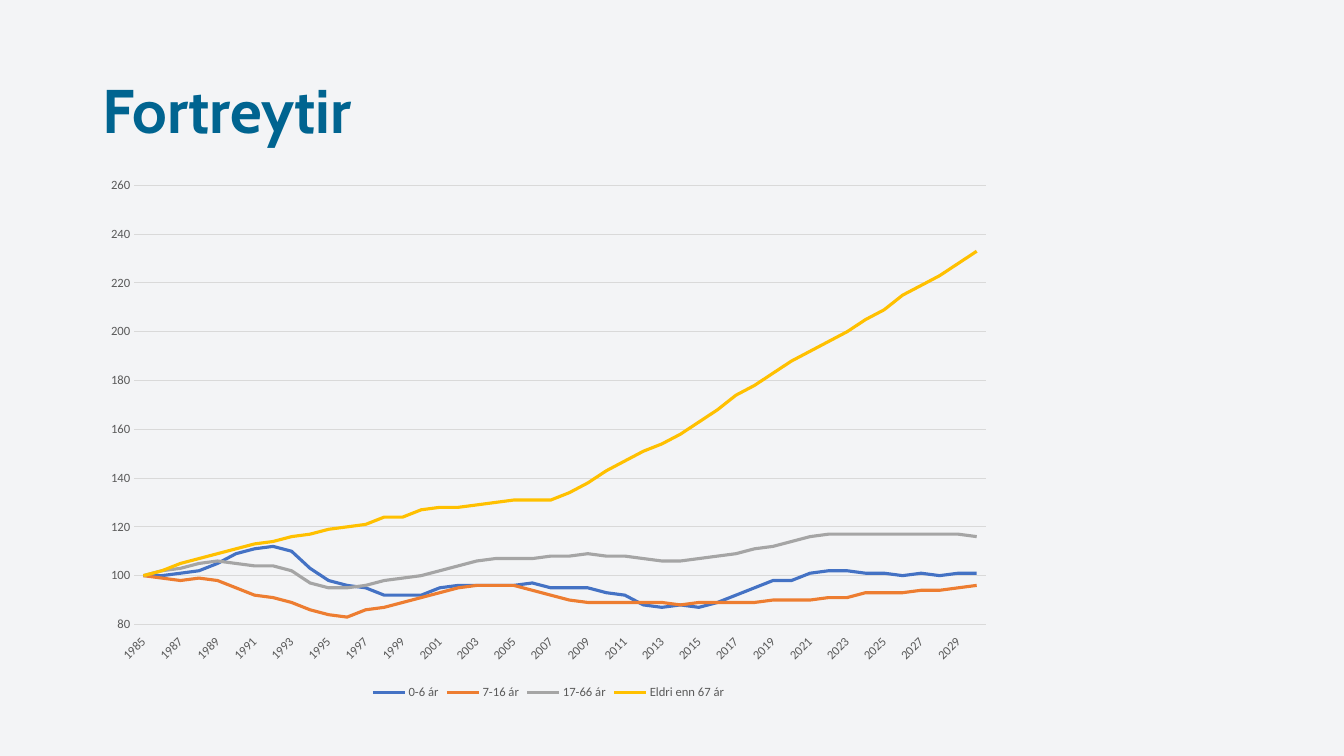
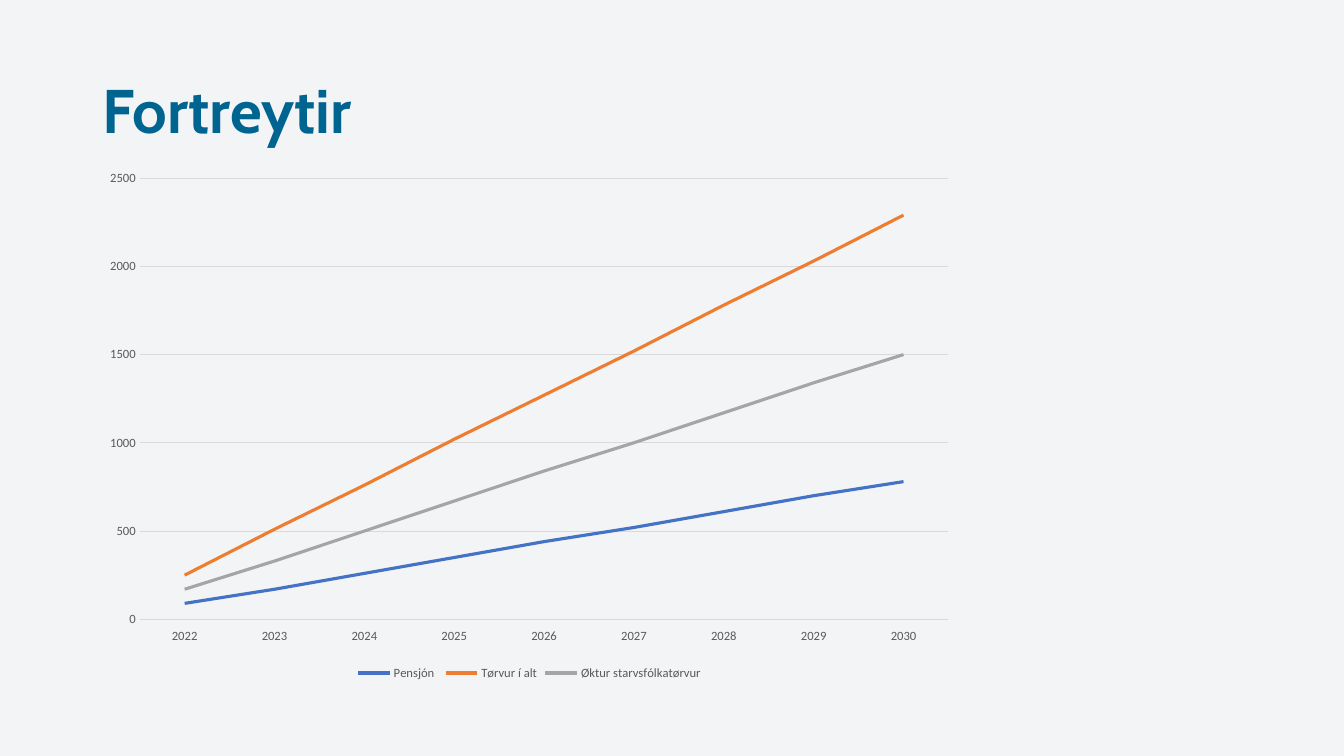
import dataclasses
import pptx
import pptx.chart.data
import pptx.dml.color
import pptx.enum.chart
import pptx.enum.text
import pptx.oxml.ns
import pptx.util

Inches = pptx.util.Inches
Pt = pptx.util.Pt


# Shared colours, fonts and sizes
@dataclasses.dataclass(frozen=True)
class Theme:
    back: str = "F3F4F6"
    head: str = "006490"
    label: str = "595959"
    grid: str = "D9D9D9"
    lines: tuple = ("4472C4", "ED7D31", "A5A5A5", "FFC000")
    head_font: str = "Cabin"
    font: str = "Calibri"
    head_size: int = 44
    size: int = 9
    thin: float = 0.75
    thick: float = 2.25


THEME = Theme()

# Index of each age group, 1985 = 100
AGES = {
    "0-6 ár": (
        100, 100, 101, 102, 105, 109, 111, 112, 110, 103, 98, 96, 95, 92, 92, 92,
        95, 96, 96, 96, 96, 97, 95, 95, 95, 93, 92, 88, 87, 88, 87, 89,
        92, 95, 98, 98, 101, 102, 102, 101, 101, 100, 101, 100, 101, 101),
    "7-16 ár": (
        100, 99, 98, 99, 98, 95, 92, 91, 89, 86, 84, 83, 86, 87, 89, 91,
        93, 95, 96, 96, 96, 94, 92, 90, 89, 89, 89, 89, 89, 88, 89, 89,
        89, 89, 90, 90, 90, 91, 91, 93, 93, 93, 94, 94, 95, 96),
    "17-66 ár": (
        100, 102, 103, 105, 106, 105, 104, 104, 102, 97, 95, 95, 96, 98, 99, 100,
        102, 104, 106, 107, 107, 107, 108, 108, 109, 108, 108, 107, 106, 106, 107, 108,
        109, 111, 112, 114, 116, 117, 117, 117, 117, 117, 117, 117, 117, 116),
    "Eldri enn 67 ár": (
        100, 102, 105, 107, 109, 111, 113, 114, 116, 117, 119, 120, 121, 124, 124, 127,
        128, 128, 129, 130, 131, 131, 131, 134, 138, 143, 147, 151, 154, 158, 163, 168,
        174, 178, 183, 188, 192, 196, 200, 205, 209, 215, 219, 223, 228, 233),
}

# Need for staff
STAFF = {
    "Pensjón ": (90, 170, 260, 350, 440, 520, 610, 700, 780),
    "Tørvur í alt": (250, 510, 760, 1020, 1270, 1520, 1780, 2030, 2290),
    "Øktur starvsfólkatørvur": (170, 330, 500, 670, 840, 1000, 1170, 1340, 1500),
}


def color(code):
    return pptx.dml.color.RGBColor.from_string(code)


def style_font(font, name, size, code, bold=False):
    font.name = name
    font.size = Pt(size)
    font.bold = bold
    font.color.rgb = color(code)


def style_line(line, code, width):
    line.color.rgb = color(code)
    line.width = Pt(width)


def add_slide(deck, title):
    """Add a blank slide with the shared ground and title."""
    slide = deck.slides.add_slide(deck.slide_layouts[6])
    slide.background.fill.solid()
    slide.background.fill.fore_color.rgb = color(THEME.back)

    box = slide.shapes.add_textbox(Inches(0.92), Inches(0.4), Inches(11.5), Inches(1.45))
    frame = box.text_frame
    frame.word_wrap = True
    frame.vertical_anchor = pptx.enum.text.MSO_ANCHOR.MIDDLE
    frame.text = title
    para = frame.paragraphs[0]
    para.line_spacing = 0.9
    style_font(para.runs[0].font, THEME.head_font, THEME.head_size, THEME.head, True)
    return slide


def style_axis(axis):
    axis.major_tick_mark = pptx.enum.chart.XL_TICK_MARK.NONE
    axis.minor_tick_mark = pptx.enum.chart.XL_TICK_MARK.NONE
    style_font(axis.tick_labels.font, THEME.font, THEME.size, THEME.label)


def style_axes(chart, low, high, step, form):
    years = chart.category_axis
    style_axis(years)
    years.tick_label_position = pptx.enum.chart.XL_TICK_LABEL_POSITION.LOW
    style_line(years.format.line, THEME.grid, THEME.thin)
    # Let the year labels turn when they are crowded
    body = years._element.find(".//" + pptx.oxml.ns.qn("a:bodyPr"))
    body.set("rot", "-60000000")

    scale = chart.value_axis
    style_axis(scale)
    scale.format.line.fill.background()
    scale.minimum_scale = low
    scale.maximum_scale = high
    scale.major_unit = step
    scale.has_major_gridlines = True
    style_line(scale.major_gridlines.format.line, THEME.grid, THEME.thin)
    scale.tick_labels.number_format = form
    scale.tick_labels.number_format_is_linked = False


def add_lines(slide, place, start, groups, low, high, step, form="General"):
    """Add a line chart with one point a year from the start year."""
    data = pptx.chart.data.CategoryChartData()
    count = len(next(iter(groups.values())))
    data.categories = [str(start + i) for i in range(count)]
    for name, values in groups.items():
        data.add_series(name, values)

    kind = pptx.enum.chart.XL_CHART_TYPE.LINE
    chart = slide.shapes.add_chart(kind, *map(Inches, place), data).chart
    chart.has_title = False
    chart.font.name = THEME.font
    chart.font.size = Pt(10)
    style_axes(chart, low, high, step, form)

    # Series
    plot = chart.plots[0]
    plot.vary_by_categories = False
    for series, code in zip(plot.series, THEME.lines):
        series.smooth = False
        style_line(series.format.line, code, THEME.thick)

    # Legend
    chart.has_legend = True
    chart.legend.position = pptx.enum.chart.XL_LEGEND_POSITION.BOTTOM
    chart.legend.include_in_layout = False
    style_font(chart.legend.font, THEME.font, THEME.size, THEME.label)


def main():
    deck = pptx.Presentation()
    deck.slide_width = Inches(13.33)
    deck.slide_height = Inches(7.5)

    # Age groups
    slide = add_slide(deck, "Fortreytir")
    add_lines(slide, (0.92, 1.66, 9.04, 5.32), 1985, AGES, 80, 260, 20, "#,##0")

    # Staff
    slide = add_slide(deck, "Fortreytir")
    add_lines(slide, (0.92, 1.59, 8.66, 5.2), 2022, STAFF, 0, 2500, 500)

    deck.save("out.pptx")


if __name__ == "__main__":
    main()
